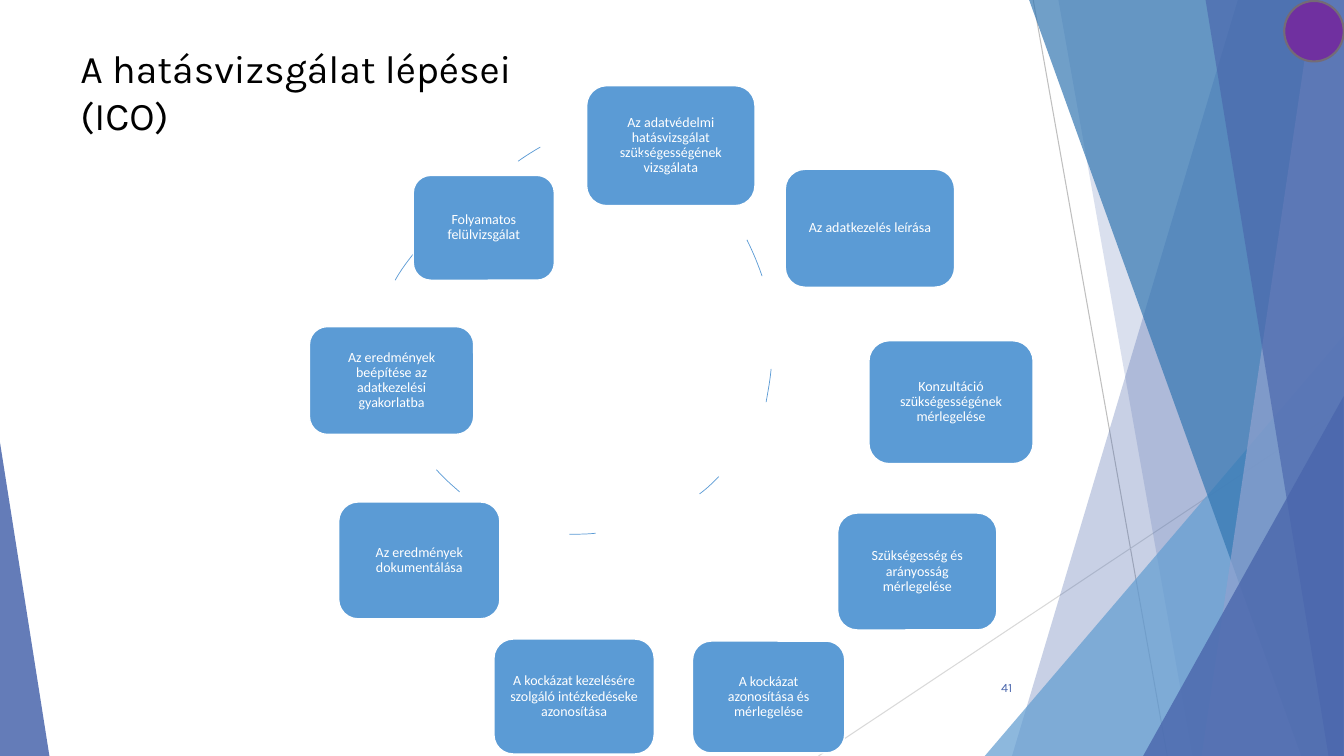
from dataclasses import dataclass

import lxml.etree
import pptx
import pptx.dml.color
import pptx.enum.shapes
import pptx.enum.text
import pptx.oxml.ns
import pptx.util

RGBColor = pptx.dml.color.RGBColor
Align = pptx.enum.text.PP_ALIGN
Anchor = pptx.enum.text.MSO_ANCHOR
Preset = pptx.enum.shapes.MSO_SHAPE

WHITE = RGBColor(0xFF, 0xFF, 0xFF)
BLACK = RGBColor(0x00, 0x00, 0x00)
INDIGO = RGBColor(0x4A, 0x66, 0xAC)
SKY = RGBColor(0x62, 0x9D, 0xD1)
OCEAN = RGBColor(0x34, 0x77, 0xB2)
LAVENDER = RGBColor(0x90, 0xA2, 0xCF)
STEP_BLUE = RGBColor(0x5B, 0x9B, 0xD5)
PURPLE = RGBColor(0x70, 0x30, 0xA0)
TAUPE = RGBColor(0x74, 0x6B, 0x76)
MID_GREY = RGBColor(0xBF, 0xBF, 0xBF)
PALE_GREY = RGBColor(0xD9, 0xD9, 0xD9)

# The slide is a grid of square cells, a tenth of an inch each.
COLUMNS, ROWS = 133.33, 75
DASH_PIECES = 6

Point = tuple[float, float]


@dataclass(frozen=True)
class Area:
    left: float
    top: float
    width: float
    height: float


@dataclass(frozen=True)
class Band:
    """A strip reaching the right edge, with a slanted left side."""
    top_left: float
    bottom_left: float
    colour: RGBColor
    opacity: int


@dataclass(frozen=True)
class Wedge:
    area: Area
    apex: float
    colour: RGBColor
    opacity: int


@dataclass(frozen=True)
class Step:
    """A box of the cycle and the curve points of the dash that follows it."""
    text: str
    area: Area
    dash: tuple[Point, Point, Point, Point]


@dataclass(frozen=True)
class TextStyle:
    font: str
    size: float
    colour: RGBColor
    align: Align
    line_spacing: float = 1.0


TITLE_STYLE = TextStyle("Karla", 28, BLACK, Align.LEFT)
NUMBER_STYLE = TextStyle("Karla", 9, INDIGO, Align.RIGHT)
STEP_STYLE = TextStyle("Calibri", 10, WHITE, Align.CENTER, 0.9)

RAYS = [((102.5, 0), (115.8, ROWS), MID_GREY), ((COLUMNS, 40.3), (81.2, ROWS), PALE_GREY)]

FACETS = [
    Band(122.8, 100.4, INDIGO, 30),
    Band(105, 118.3, INDIGO, 20),
    Wedge(Area(97.7, 33.3, 35.6, 41.7), 1, SKY, 72),
    Band(102.1, 129.1, OCEAN, 70),
    Band(130.3, 119.2, LAVENDER, 70),
    Band(119.6, 131.8, INDIGO, 65),
    Wedge(Area(113.4, 39.3, 19.9, 35.7), 1, INDIGO, 80),
    Wedge(Area(0, 43.9, 4.9, 31.1), 0, INDIGO, 85),
]

STEPS = [
    Step("Az adatvédelmi hatásvizsgálat szükségességének vizsgálata", Area(58.2, 8.5, 16.7, 11.9),
         ((63.1, 15.2), (63.8, 15.5), (64.5, 15.7), (65.1, 16))),
    Step("Az adatkezelés leírása", Area(77.9, 16.8, 16.8, 11.7),
         ((74.1, 23.8), (74.7, 25), (75.2, 26.2), (75.6, 27.4))),
    Step("Konzultáció szükségességének mérlegelése", Area(86.2, 33.8, 16.3, 12.2),
         ((76.5, 36.6), (76.4, 37.7), (76.2, 38.8), (76, 39.9))),
    Step("Szükségesség és arányosság mérlegelése", Area(83.1, 50.9, 15.8, 11.6),
         ((71.3, 47.3), (70.7, 47.9), (70.1, 48.5), (69.4, 49))),
    Step("A kockázat azonosítása és mérlegelése", Area(68.7, 63.6, 15.1, 11.1),
         ((59.1, 52.9), (58.2, 53), (57.4, 53), (56.5, 53))),
    Step("A kockázat kezelésére szolgáló intézkedéseke azonosítása", Area(49, 63.4, 15.9, 11.4),
         ((45.6, 48.8), (44.8, 48.1), (44, 47.4), (43.3, 46.6))),
    Step("Az eredmények dokumentálása", Area(33.6, 49.8, 16, 11.6),
         ((39, 38.6), (38.6, 37.1), (38.4, 35.6), (38.4, 34.1))),
    Step("Az eredmények beépítése az adatkezelési gyakorlatba", Area(30.7, 32.4, 16.3, 10.7),
         ((39.2, 27.8), (39.8, 26.7), (40.6, 25.7), (41.4, 24.7))),
    Step("Folyamatos felülvizsgálat", Area(41, 17.4, 14, 10.4),
         ((51.4, 16), (52.1, 15.5), (52.9, 15), (53.6, 14.6))),
]


def cells(count: float) -> pptx.util.Length:
    return pptx.util.Inches(count / 10)


def place(area: Area) -> list[pptx.util.Length]:
    return [cells(count) for count in (area.left, area.top, area.width, area.height)]


def paint(shape, colour: RGBColor, opacity: int = 100) -> None:
    shape.shadow.inherit = False
    shape.fill.solid()
    shape.fill.fore_color.rgb = colour
    if opacity < 100:
        tint = shape.fill._xPr.find(".//" + pptx.oxml.ns.qn("a:srgbClr"))
        lxml.etree.SubElement(tint, pptx.oxml.ns.qn("a:alpha"), val=str(opacity * 1000))


def outline(shape, colour: RGBColor, points: float) -> None:
    shape.line.color.rgb = colour
    shape.line.width = pptx.util.Pt(points)


def trace(page, points: list[Point], close: bool):
    start, *rest = [(cells(x), cells(y)) for x, y in points]
    builder = page.shapes.build_freeform(*start)
    builder.add_line_segments(rest, close=close)
    return builder.convert_to_shape()


def curve_points(controls: tuple[Point, Point, Point, Point]) -> list[Point]:
    """Points along the cubic Bézier curve of the four controls."""
    points = []
    for piece in range(DASH_PIECES + 1):
        t = piece / DASH_PIECES
        weights = ((1 - t) ** 3, 3 * t * (1 - t) ** 2, 3 * t ** 2 * (1 - t), t ** 3)
        points.append(tuple(sum(w * c[axis] for w, c in zip(weights, controls)) for axis in (0, 1)))
    return points


def write(shape, text: str, style: TextStyle, anchor: Anchor) -> None:
    frame = shape.text_frame
    frame.word_wrap = True
    frame.vertical_anchor = anchor
    para = frame.paragraphs[0]
    para.text = text
    para.alignment = style.align
    para.line_spacing = style.line_spacing
    para.font.name = style.font
    para.font.size = pptx.util.Pt(style.size)
    para.font.color.rgb = style.colour


def draw_ray(page, start: Point, end: Point, colour: RGBColor) -> None:
    ray = page.shapes.add_connector(pptx.enum.shapes.MSO_CONNECTOR.STRAIGHT,
                                    *map(cells, start + end))
    outline(ray, colour, 0.75)
    lxml.etree.SubElement(ray._element.spPr, pptx.oxml.ns.qn("a:effectLst"))


def draw_facet(page, facet: Band | Wedge) -> None:
    if isinstance(facet, Band):
        corners = [(facet.top_left, 0), (COLUMNS, 0), (COLUMNS, ROWS), (facet.bottom_left, ROWS)]
        shape = trace(page, corners, close=True)
    else:
        shape = page.shapes.add_shape(Preset.ISOSCELES_TRIANGLE, *place(facet.area))
        shape.adjustments[0] = facet.apex
    paint(shape, facet.colour, facet.opacity)
    shape.line.fill.background()


def draw_step(page, step: Step) -> None:
    box = page.shapes.add_shape(Preset.ROUNDED_RECTANGLE, *place(step.area))
    paint(box, STEP_BLUE)
    outline(box, WHITE, 1)
    frame = box.text_frame
    frame.margin_left = frame.margin_right = frame.margin_top = frame.margin_bottom = cells(0.9)
    write(box, step.text, STEP_STYLE, Anchor.MIDDLE)
    dash = trace(page, curve_points(step.dash), close=False)
    dash.shadow.inherit = False
    dash.fill.background()
    outline(dash, STEP_BLUE, 0.5)


def main() -> None:
    deck = pptx.Presentation()
    deck.slide_width, deck.slide_height = cells(COLUMNS), cells(ROWS)
    page = deck.slides.add_slide(deck.slide_layouts[6])
    page.background.fill.solid()
    page.background.fill.fore_color.rgb = WHITE
    for start, end, colour in RAYS:
        draw_ray(page, start, end, colour)
    for facet in FACETS:
        draw_facet(page, facet)
    number = page.shapes.add_textbox(*place(Area(93.9, 66.2, 7.5, 4)))
    write(number, "41", NUMBER_STYLE, Anchor.MIDDLE)
    title = page.shapes.add_textbox(*place(Area(7, 3.9, 53.8, 5.7)))
    write(title, "A hatásvizsgálat lépései (ICO)", TITLE_STYLE, Anchor.TOP)
    badge = page.shapes.add_shape(Preset.OVAL, *place(Area(127.4, 0.1, 5.9, 6)))
    paint(badge, PURPLE)
    outline(badge, TAUPE, 1.5)
    for step in STEPS:
        draw_step(page, step)
    deck.save("out.pptx")


if __name__ == "__main__":
    main()
